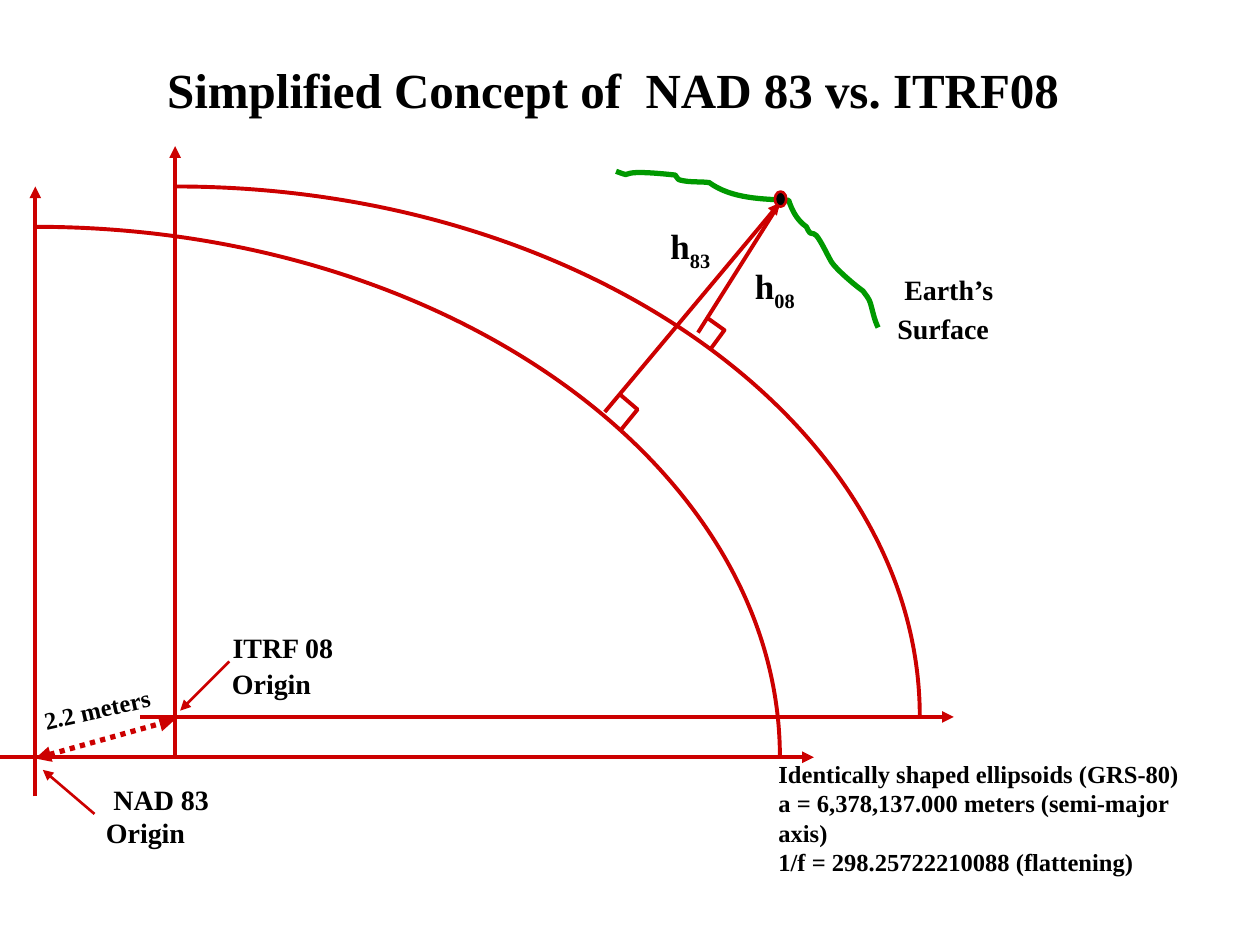
from dataclasses import dataclass

import pptx
import pptx.dml.color
import pptx.enum.dml
import pptx.enum.shapes
import pptx.enum.text
import pptx.oxml
import pptx.oxml.ns
import pptx.util

Inches = pptx.util.Inches
Pt = pptx.util.Pt
Point = tuple[float, float]
ALIGN = pptx.enum.text.PP_ALIGN
AUTO_SIZE = pptx.enum.text.MSO_AUTO_SIZE


@dataclass(frozen=True)
class Theme:
    font: str = "Times New Roman"
    ink: str = "000000"
    datum: str = "CC0000"
    terrain: str = "009900"
    title_size: float = 28
    height_size: float = 20
    label_size: float = 16
    note_size: float = 14
    main_line: float = 2.25
    heavy_line: float = 3
    thin_line: float = 1.5


@dataclass(frozen=True)
class Label:
    text: str
    box: tuple[float, float, float, float]
    size: float
    subscript: str = ""
    rotation: float = 0
    align: ALIGN = ALIGN.CENTER
    wrap: bool = False


THEME = Theme()
SEMI_MAJOR, SEMI_MINOR = 5.91, 4.21
QUADRANT_HANDLE = 0.55
NAD83_ORIGIN = (0.28, 6.01)
ITRF08_ORIGIN = (1.39, 5.69)
STATION = (6.19, 1.61)

RIGHT_ANGLES = [
    [(4.92, 3.13), (5.06, 3.25), (4.93, 3.41)],
    [(5.61, 2.52), (5.75, 2.62), (5.64, 2.77)],
]
# A start point, then two control points and an end point per Bezier segment.
TERRAIN = [
    (4.89, 1.36),
    (5.08, 1.43), (4.81, 1.33), (5.36, 1.39),
    (5.37, 1.40), (5.38, 1.43), (5.40, 1.43),
    (5.48, 1.45), (5.56, 1.44), (5.63, 1.45),
    (5.81, 1.58), (6.06, 1.58), (6.26, 1.59),
    (6.29, 1.68), (6.33, 1.75), (6.40, 1.80),
    (6.41, 1.82), (6.42, 1.84), (6.43, 1.85),
    (6.45, 1.86), (6.47, 1.85), (6.48, 1.87),
    (6.52, 1.92), (6.56, 2.01), (6.60, 2.08),
    (6.64, 2.14), (6.78, 2.26), (6.85, 2.31),
    (6.87, 2.34), (6.90, 2.37), (6.91, 2.41),
    (6.93, 2.48), (6.94, 2.54), (6.97, 2.60),
]
LABELS = [
    Label("2.2 meters", (0.24, 5.46, 1.06, 0.33), THEME.note_size, rotation=347.3),
    Label("NAD 83", (0.80, 6.16, 0.96, 0.37), THEME.label_size),
    Label("Origin", (0.74, 6.42, 0.83, 0.37), THEME.label_size),
    Label("ITRF 08", (1.74, 4.95, 1.01, 0.37), THEME.label_size),
    Label("Origin", (1.74, 5.24, 0.83, 0.37), THEME.label_size),
    Label("Earth’s", (7.07, 2.11, 0.92, 0.37), THEME.label_size),
    Label("Surface", (7.02, 2.42, 0.93, 0.37), THEME.label_size),
    Label("h", (5.21, 1.76, 0.54, 0.43), THEME.height_size, subscript="83"),
    Label("h", (5.88, 2.07, 0.54, 0.44), THEME.height_size, subscript="08"),
    Label("Identically shaped ellipsoids (GRS-80)\n"
          "a = 6,378,137.000 meters (semi-major axis)\n"
          "1/f = 298.25722210088 (flattening)",
          (6.08, 6.09, 3.70, 0.80), THEME.note_size, align=ALIGN.LEFT, wrap=True),
]


def rgb(code: str) -> pptx.dml.color.RGBColor:
    return pptx.dml.color.RGBColor.from_string(code)


def style_line(line, color: str, width: float) -> None:
    line.color.rgb = rgb(color)
    line.width = Pt(width)


def draw_line(slide, start: Point, end: Point, width: float = THEME.main_line,
              head: bool = False, tail: bool = True, dotted: bool = False) -> None:
    """Draw a datum-coloured line; head and tail put arrowheads at start and end."""
    connector = slide.shapes.add_connector(
        pptx.enum.shapes.MSO_CONNECTOR.STRAIGHT, *map(Inches, start + end))
    style_line(connector.line, THEME.datum, width)
    if dotted:
        connector.line.dash_style = pptx.enum.dml.MSO_LINE.ROUND_DOT
    outline = connector.line._get_or_add_ln()
    for tag, wanted in (("a:headEnd", head), ("a:tailEnd", tail)):
        if wanted:
            arrow = pptx.oxml.parse_xml(
                f'<{tag} {pptx.oxml.ns.nsdecls("a")} type="triangle"/>')
            outline.append(arrow)
    connector._element.spPr.append(
        pptx.oxml.parse_xml(f'<a:effectLst {pptx.oxml.ns.nsdecls("a")}/>'))


def draw_path(slide, points: list[Point], color: str, width: float):
    vertices = [(Inches(x), Inches(y)) for x, y in points]
    builder = slide.shapes.build_freeform(*vertices[0])
    builder.add_line_segments(vertices[1:], close=False)
    outline = builder.convert_to_shape()
    outline.fill.background()
    outline.shadow.inherit = False
    style_line(outline.line, color, width)
    return outline


def draw_curve(slide, points: list[Point], color: str, width: float) -> None:
    """Draw a path whose points, after the first, are Bezier triples."""
    curve = draw_path(slide, points, color, width)
    segments = curve._element.findall(".//" + pptx.oxml.ns.qn("a:lnTo"))
    for first in range(0, len(segments), 3):
        triple = segments[first:first + 3]
        bezier = pptx.oxml.parse_xml(
            f'<a:cubicBezTo {pptx.oxml.ns.nsdecls("a")}/>')
        triple[0].addprevious(bezier)
        for segment in triple:
            bezier.append(segment[0])
            segment.getparent().remove(segment)


def ellipse_quadrant(origin: Point) -> list[Point]:
    x, y = origin
    return [(x, y - SEMI_MINOR),
            (x + QUADRANT_HANDLE * SEMI_MAJOR, y - SEMI_MINOR),
            (x + SEMI_MAJOR, y - QUADRANT_HANDLE * SEMI_MINOR),
            (x + SEMI_MAJOR, y)]


def draw_datum(slide, origin: Point) -> None:
    x, y = origin
    draw_line(slide, (x, y + 0.31), (x, y - 4.53))
    draw_line(slide, (x - 0.28, y), (x + 6.18, y))
    draw_curve(slide, ellipse_quadrant(origin), THEME.datum, THEME.main_line)


def write_label(shape, label: Label) -> None:
    shape.left, shape.top, shape.width, shape.height = map(Inches, label.box)
    shape.rotation = label.rotation
    frame = shape.text_frame
    frame.text = label.text
    frame.word_wrap = label.wrap
    frame.auto_size = AUTO_SIZE.NONE if label.wrap else AUTO_SIZE.SHAPE_TO_FIT_TEXT
    frame.vertical_anchor = pptx.enum.text.MSO_ANCHOR.MIDDLE
    if label.subscript:
        subscript = frame.paragraphs[0].add_run()
        subscript.text = label.subscript
        subscript.font._element.set("baseline", "-25000")
    for paragraph in frame.paragraphs:
        paragraph.alignment = label.align
        for run in paragraph.runs:
            run.font.name = THEME.font
            run.font.size = Pt(label.size)
            run.font.bold = True
            run.font.color.rgb = rgb(THEME.ink)


def draw_station(slide) -> None:
    station = slide.shapes.add_shape(
        pptx.enum.shapes.MSO_SHAPE.OVAL, *map(Inches, (6.15, 1.52, 0.09, 0.12)))
    station.shadow.inherit = False
    station.fill.solid()
    station.fill.fore_color.rgb = rgb(THEME.ink)
    style_line(station.line, THEME.datum, THEME.thin_line)


def main() -> None:
    deck = pptx.Presentation()
    deck.slide_width, deck.slide_height = Inches(10), Inches(7.5)
    slide = deck.slides.add_slide(deck.slide_layouts.get_by_name("Title Only"))
    write_label(slide.shapes.title, Label("Simplified Concept of  NAD 83 vs. ITRF08",
                                          (1.22, 0.42, 7.29, 0.57), THEME.title_size))
    for origin in (NAD83_ORIGIN, ITRF08_ORIGIN):
        draw_datum(slide, origin)
    draw_line(slide, (0.28, 6.02), (1.39, 5.71), THEME.heavy_line, head=True, dotted=True)
    draw_line(slide, (4.80, 3.27), STATION)
    draw_line(slide, (5.54, 2.64), STATION, tail=False)
    for corner in RIGHT_ANGLES:
        draw_path(slide, corner, THEME.datum, THEME.main_line)
    draw_curve(slide, TERRAIN, THEME.terrain, THEME.heavy_line)
    draw_station(slide)
    draw_line(slide, (0.75, 6.46), (0.34, 6.11), THEME.thin_line)
    draw_line(slide, (1.82, 5.25), (1.43, 5.64), THEME.thin_line)
    for label in LABELS:
        write_label(slide.shapes.add_textbox(0, 0, 0, 0), label)
    deck.save("out.pptx")


if __name__ == "__main__":
    main()
